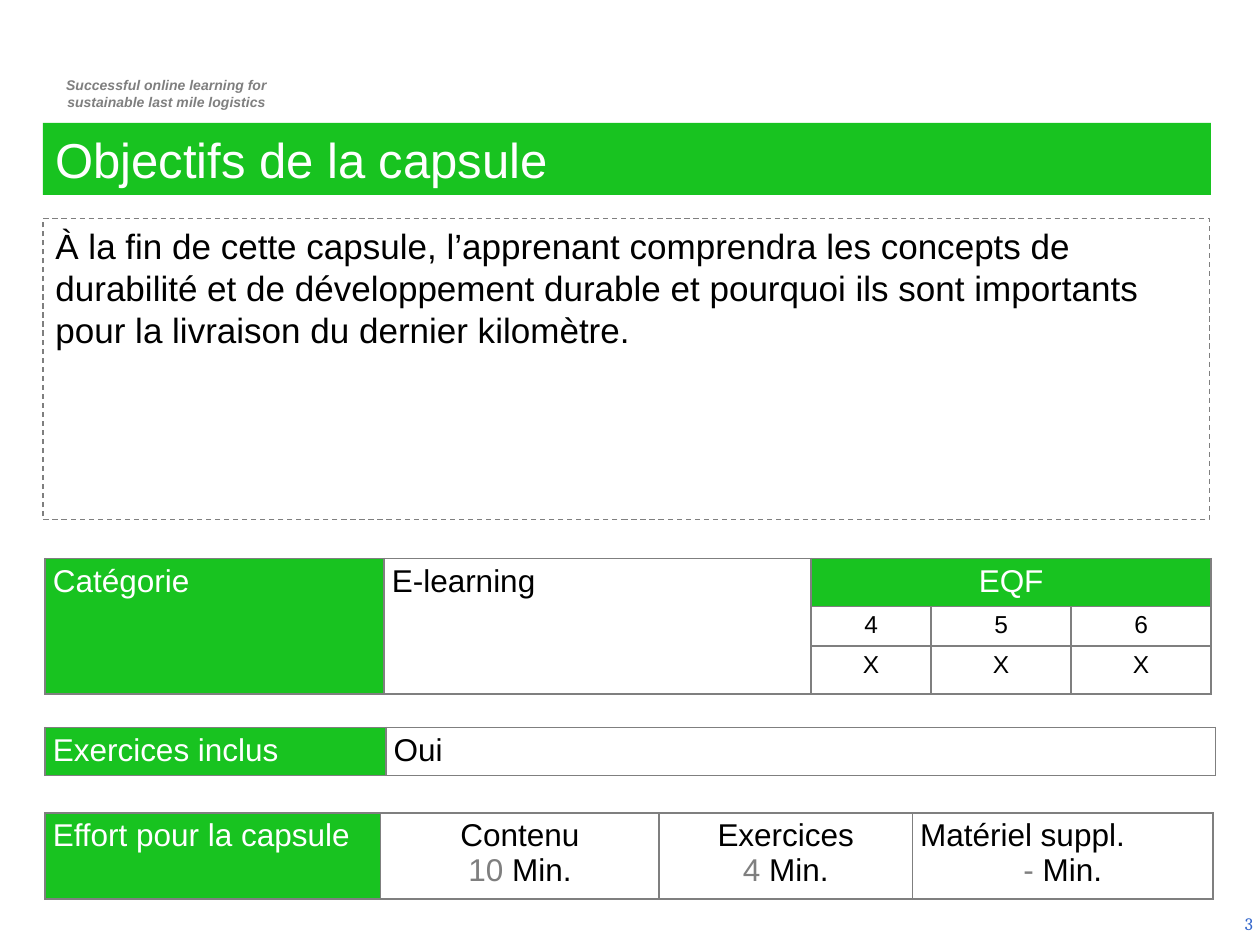
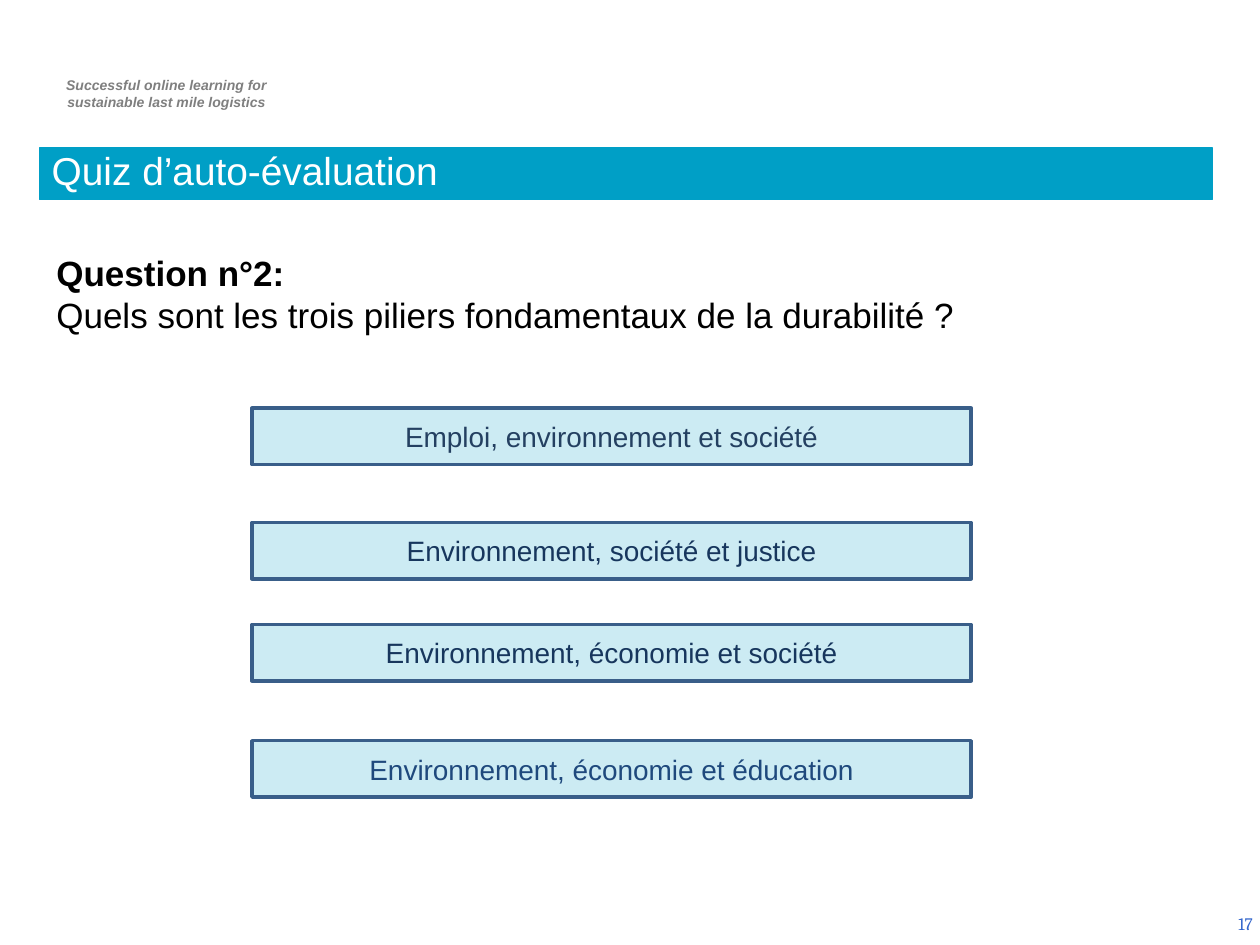
from lxml.etree import SubElement
from pptx import Presentation
from pptx.dml.color import RGBColor
from pptx.enum.dml import MSO_LINE
from pptx.enum.shapes import MSO_SHAPE
from pptx.enum.text import MSO_ANCHOR, PP_ALIGN
from pptx.oxml.ns import qn
from pptx.util import Pt

COLORS = {
    "green": "18C320", "teal": "009FC6", "white": "FFFFFF", "black": "000000",
    "gray": "7F7F7F", "page": "3366CC", "outline": "395E89",
    "navy": "17365D", "slate": "244061", "blue": "1F497D",
}
LEFT, CENTER, RIGHT = PP_ALIGN.LEFT, PP_ALIGN.CENTER, PP_ALIGN.RIGHT


def rgb(name):
    """Return the named colour."""
    return RGBColor.from_string(COLORS[name])


def write(frame, lines, size, color="black", align=LEFT, font="Arial",
          anchor=MSO_ANCHOR.TOP, bold=False, italic=False):
    """Fill a text frame; a line is a string or a list of (text, colour) runs."""
    frame.word_wrap = True
    frame.vertical_anchor = anchor
    for index, line in enumerate(lines):
        paragraph = frame.paragraphs[0] if index == 0 else frame.add_paragraph()
        paragraph.alignment = align
        paragraph.font.name = font
        paragraph.font.size = Pt(size)
        paragraph.font.bold = bold
        paragraph.font.italic = italic
        if isinstance(line, str):
            paragraph.font.color.rgb = rgb(color)
            paragraph.add_run().text = line
            continue
        for text, run_color in line:
            run = paragraph.add_run()
            run.text = text
            run.font.color.rgb = rgb(run_color)


def add_text(slide, box, lines, size, **style):
    """Add a text box and return its frame."""
    frame = slide.shapes.add_textbox(*map(Pt, box)).text_frame
    write(frame, lines, size, **style)
    return frame


def add_panel(slide, box, fill=None, line=None, width=0.75):
    """Add a rectangle with an optional fill and outline."""
    panel = slide.shapes.add_shape(MSO_SHAPE.RECTANGLE, *map(Pt, box))
    panel.shadow.inherit = False
    if fill:
        panel.fill.solid()
        panel.fill.fore_color.rgb = rgb(fill)
    else:
        panel.fill.background()
    if line:
        panel.line.color.rgb = rgb(line)
        panel.line.width = Pt(width)
    else:
        panel.line.fill.background()
    return panel


def add_title(slide, box, title, size, fill, anchor=MSO_ANCHOR.TOP, line=None):
    """Add the coloured title band."""
    band = add_panel(slide, box, fill, line)
    write(band.text_frame, [title], size, color="white", anchor=anchor)
    return band.text_frame


def add_answer(slide, top, answer, color):
    """Add one quiz answer on a tinted panel."""
    panel = add_panel(slide, (144, top, 411, 32.2), "teal", "outline", 2)
    tint = panel.fill._xPr.find(qn("a:solidFill"))[0]
    SubElement(tint, qn("a:alpha"), val="20000")
    write(panel.text_frame, [answer], 16, color=color, align=CENTER,
          anchor=MSO_ANCHOR.MIDDLE)


def style_cell(cell, fill):
    """Set the margins, grey borders and fill of a cell."""
    cell.margin_left = cell.margin_right = Pt(4.5)
    cell.margin_top = cell.margin_bottom = Pt(2.9)
    properties = cell._tc.get_or_add_tcPr()
    for side in ("lnL", "lnR", "lnT", "lnB"):
        border = SubElement(properties, qn(f"a:{side}"), w=str(Pt(1)))
        paint = SubElement(border, qn("a:solidFill"))
        SubElement(paint, qn("a:srgbClr"), val=COLORS["gray"])
    if fill:
        cell.fill.solid()
        cell.fill.fore_color.rgb = rgb(fill)
    else:
        cell.fill.background()


def add_grid(slide, top, widths, heights, green_cells):
    """Add a bordered table whose green cells are given as (row, column)."""
    table = slide.shapes.add_table(
        len(heights), len(widths), Pt(25.7), Pt(top),
        Pt(sum(widths)), Pt(sum(heights))).table
    table.first_row = table.horz_banding = False
    for column, width in zip(table.columns, widths):
        column.width = Pt(width)
    for row, height in enumerate(heights):
        table.rows[row].height = Pt(height)
        for column in range(len(widths)):
            style_cell(table.cell(row, column),
                       "green" if (row, column) in green_cells else None)
    return table


def add_category(slide):
    """Add the table of category and EQF levels."""
    grid = add_grid(slide, 319.2, [193.7, 244.1, 68.6, 80, 80], [26.5, 22.3, 26.9],
                    {(0, 0), (1, 0), (2, 0), (0, 2), (0, 3), (0, 4)})
    for start, end in (((0, 0), (2, 0)), ((0, 1), (2, 1)), ((0, 2), (0, 4))):
        grid.cell(*start).merge(grid.cell(*end))
    write(grid.cell(0, 0).text_frame, ["Catégorie"], 18, color="white")
    write(grid.cell(0, 1).text_frame, ["E-learning"], 18)
    write(grid.cell(0, 2).text_frame, ["EQF"], 18, color="white", align=CENTER)
    for column, level in enumerate("456", start=2):
        for row, mark in enumerate((level, "X"), start=1):
            write(grid.cell(row, column).text_frame, [mark], 14, align=CENTER)


def add_exercises(slide):
    """Add the table telling whether exercises are included."""
    grid = add_grid(slide, 415.8, [194.8, 474], [27.2], {(0, 0)})
    write(grid.cell(0, 0).text_frame, ["Exercices inclus"], 18, color="white")
    write(grid.cell(0, 1).text_frame, ["Oui"], 18)


def add_effort(slide):
    """Add the table of minutes per part of the capsule."""
    grid = add_grid(slide, 464.6, [191.8, 159.2, 144.6, 172], [48.4], {(0, 0)})
    write(grid.cell(0, 0).text_frame, ["Effort pour la capsule"], 18, color="white")
    efforts = (("Contenu", "10", CENTER), ("Exercices", "4", CENTER),
               ("Matériel suppl.", "-", LEFT))
    for column, (part, minutes, part_align) in enumerate(efforts, start=1):
        frame = grid.cell(0, column).text_frame
        write(frame, [part, [(f"{minutes} ", "gray"), ("Min.", "black")]], 18,
              align=CENTER)
        frame.paragraphs[0].alignment = part_align


def start_slide(deck, number):
    """Add a blank slide with the tagline and page number."""
    slide = deck.slides.add_slide(deck.slide_layouts[6])
    add_text(slide, (22.2, 40.3, 146, 26.6),
             ["Successful online learning for", "sustainable last mile logistics"], 8,
             color="gray", align=CENTER, bold=True, italic=True)
    add_text(slide, (555, 513.4, 168, 28.8), [number], 10, color="page",
             align=RIGHT, font="Cambria", anchor=MSO_ANCHOR.MIDDLE)
    return slide


def build_objectives(deck):
    """Build the slide of capsule objectives."""
    slide = start_slide(deck, "3")
    add_title(slide, (24.5, 70.2, 667.5, 41.2), "Objectifs de la capsule", 28, "green")
    objective = add_panel(slide, (24.6, 125, 666.7, 172), line="gray")
    objective.line.dash_style = MSO_LINE.DASH
    write(objective.text_frame, [
        "À la fin de cette capsule, l’apprenant comprendra les concepts de "
        "durabilité et de développement durable et pourquoi ils sont importants "
        "pour la livraison du dernier kilomètre."], 20)
    add_category(slide)
    add_exercises(slide)
    add_effort(slide)


def build_quiz(deck):
    """Build the self-assessment quiz slide."""
    slide = start_slide(deck, "17")
    title = add_title(slide, (22.5, 84.6, 670.4, 29.3), "Quiz d’auto-évaluation",
                      22.2, "teal", MSO_ANCHOR.BOTTOM, "teal")
    title.paragraphs[0].line_spacing = 0.8
    question = add_text(slide, (25.1, 140.4, 670.3, 80), [
        "Question n°2:", "Quels sont les trois piliers fondamentaux de la durabilité ?"], 20)
    question.paragraphs[0].font.bold = True
    for top, answer, color in (
            (233.3, "Emploi, environnement et société", "slate"),
            (298.6, "Environnement, société et justice", "navy"),
            (356.9, "Environnement, économie et société", "navy"),
            (423.3, "Environnement, économie et éducation", "blue")):
        add_answer(slide, top, answer, color)


def main():
    """Build and save the deck."""
    deck = Presentation()
    deck.slide_width, deck.slide_height = Pt(720), Pt(540)
    build_objectives(deck)
    build_quiz(deck)
    deck.save("out.pptx")


if __name__ == "__main__":
    main()
